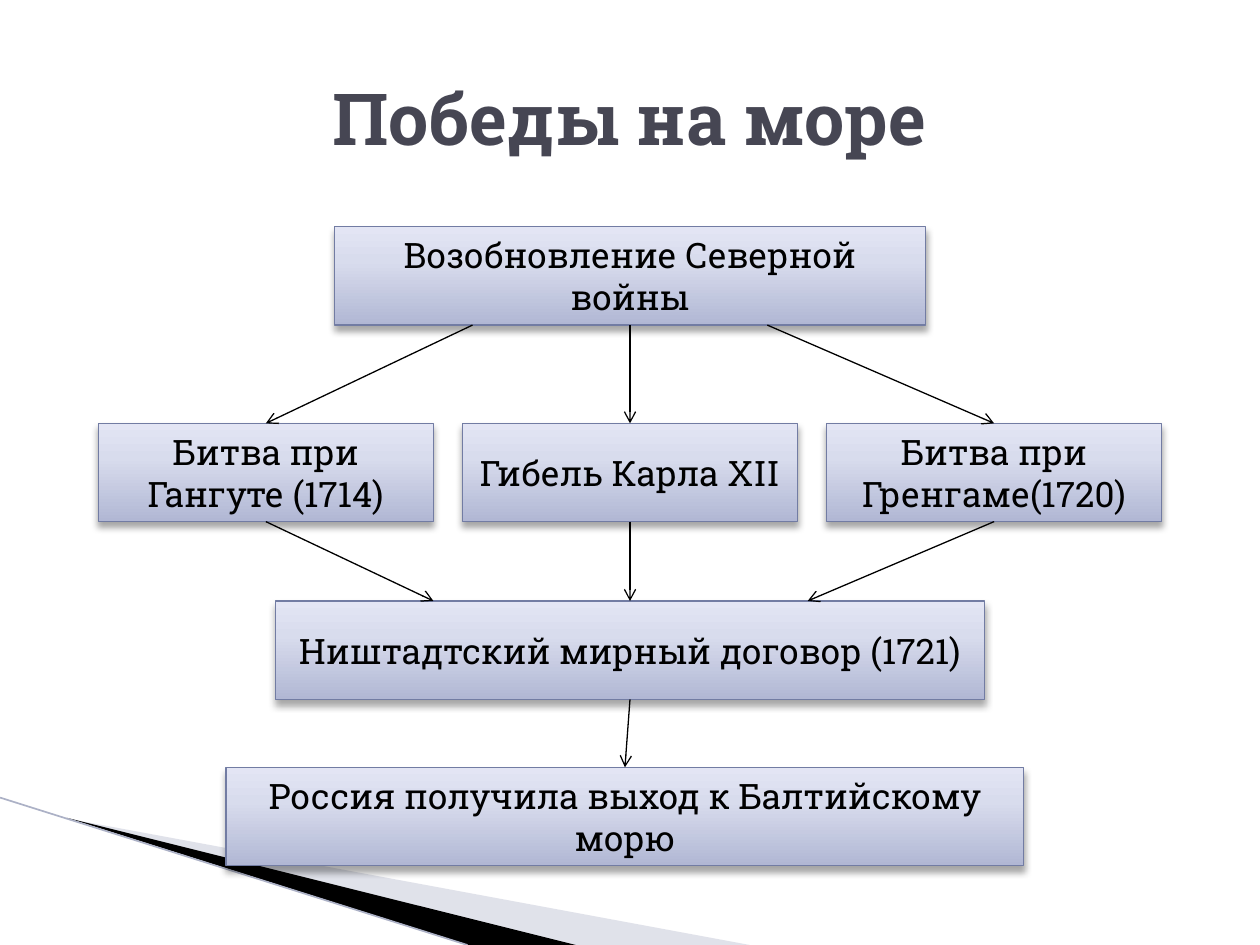
from copy import deepcopy
from lxml.etree import SubElement
from pptx import Presentation
from pptx.dml.color import RGBColor as Rgb
from pptx.enum.shapes import MSO_CONNECTOR as Line, MSO_SHAPE as Kind
from pptx.enum.text import MSO_ANCHOR as Anchor, PP_ALIGN as Align
from pptx.oxml.ns import qn
from pptx.util import Inches, Pt

# Content: each row is (top, box width, centre of row, gap, texts)
TITLE = "Победы на море"
ROWS = [
    (1.8, 4.69, 5, 0, ["Возобновление Северной войны"]),
    (3.36, 2.66, 5, 0.23, ["Битва при Гангуте (1714)", "Гибель Карла XII",
                           "Битва при Гренгаме(1720)"]),
    (4.77, 5.63, 5, 0, ["Ништадтский мирный договор (1721)"]),
    (6.09, 6.33, 4.96, 0, ["Россия получила выход к Балтийскому морю"]),
]
HIGH = 0.78
# Where side arrows leave the top box and reach the treaty box
LEAVE, REACH = (3.75, 5, 6.09), (3.44, 5, 6.41)
FONT = "Roboto Slab"
HUE = {"text": "000000", "title": "464653", "edge": "727CA3",
       "pale": "B3B7CB", "rim": "ACB1C6", "black": "000000"}
STOPS = [(0, "B1B7D4"), (0.65, "D8DCED"), (1, "E3E5F4")]
# Corner wedges: (points, colour, opacity in percent)
WEDGES = [
    ([(0.55, 6.5), (5.95, 7.5), (4.56, 7.5)], "pale", 40),
    ([(0.53, 6.49), (4.57, 7.5), (3.72, 7.5)], "black", 100),
]

deck = Presentation()
deck.slide_width, deck.slide_height = Inches(10), Inches(7.5)
slide = deck.slides.add_slide(deck.slide_layouts[5])
shapes = slide.shapes


def write(shape, text, size=20, hue="text", bold=False):
    frame = shape.text_frame
    frame.word_wrap = True
    frame.vertical_anchor = Anchor.MIDDLE
    para = frame.paragraphs[0]
    para.text, para.alignment = text, Align.CENTER
    font = para.runs[0].font
    font.name, font.size, font.bold = FONT, Pt(size), bold
    font.color.rgb = Rgb.from_string(HUE[hue])


def shade(shape):
    """Three-stop fill, dark at the bottom, and a soft shadow below."""
    shape.fill.gradient()
    shape.fill.gradient_angle = 90
    props = shape._element.spPr
    stops = props.find(".//" + qn("a:gsLst"))
    stops.append(deepcopy(stops[0]))
    for stop, (place, hue) in zip(shape.fill.gradient_stops, STOPS):
        stop.position = place
        stop.color.rgb = Rgb.from_string(hue)
    shape.line.color.rgb = Rgb.from_string(HUE["edge"])
    shape.line.width = Pt(0.75)
    shape.shadow.inherit = False
    cast = SubElement(props.find(qn("a:effectLst")), qn("a:outerShdw"),
                      blurRad=str(Pt(4)), dist=str(Pt(3)), dir="5400000",
                      rotWithShape="0")
    tint = SubElement(cast, qn("a:srgbClr"), val=HUE["black"])
    SubElement(tint, qn("a:alpha"), val="35000")


def draw(start, end, hue="black", width=0.75, head=True):
    line = shapes.add_connector(Line.STRAIGHT, *map(Inches, start + end))
    line.line.color.rgb = Rgb.from_string(HUE[hue])
    line.line.width = Pt(width)
    if head:
        SubElement(line.line._get_or_add_ln(), qn("a:tailEnd"), type="arrow")
    SubElement(line._element.spPr, qn("a:effectLst"))
    return line


def link(upper, lower, leave=None, reach=None):
    """Arrow between boxes; joined at a middle unless another x is given."""
    start = (leave or 5, (upper.top + upper.height) / Inches(1))
    end = (reach or 5, lower.top / Inches(1))
    line = draw(start, end)
    if leave in (None, 5):
        line.begin_connect(upper, 2)
    if reach in (None, 5):
        line.end_connect(lower, 0)


# Corner decoration
for points, hue, alpha in WEDGES:
    first, *rest = [tuple(map(Inches, point)) for point in points]
    form = shapes.build_freeform(*first)
    form.add_line_segments(rest)
    wedge = form.convert_to_shape()
    wedge.shadow.inherit = False
    wedge.fill.solid()
    wedge.fill.fore_color.rgb = Rgb.from_string(HUE[hue])
    wedge.line.fill.background()
    tint = wedge._element.spPr.find(".//" + qn("a:srgbClr"))
    SubElement(tint, qn("a:alpha"), val=str(alpha * 1000))
draw((0, 6.33), (3.71, 7.5), hue="rim", width=0.95, head=False)

# Title
title = shapes.title
title.left, title.top, title.width, title.height = map(
    Inches, (0.5, 0.3, 9, 1.25))
write(title, TITLE, size=41, hue="title", bold=True)

# Boxes, each row spread evenly about its centre
rows = []
for top, wide, mid, gap, texts in ROWS:
    step = wide + gap
    left = mid - (step * len(texts) - gap) / 2
    row = []
    for i, text in enumerate(texts):
        box = shapes.add_shape(Kind.RECTANGLE, *map(
            Inches, (left + i * step, top, wide, HIGH)))
        shade(box)
        write(box, text)
        row.append(box)
    rows.append(row)

# Arrows
(war,), events, (treaty,), (result,) = rows
for event, leave, reach in zip(events, LEAVE, REACH):
    link(war, event, leave=leave)
    link(event, treaty, reach=reach)
link(treaty, result)

deck.save("out.pptx")
